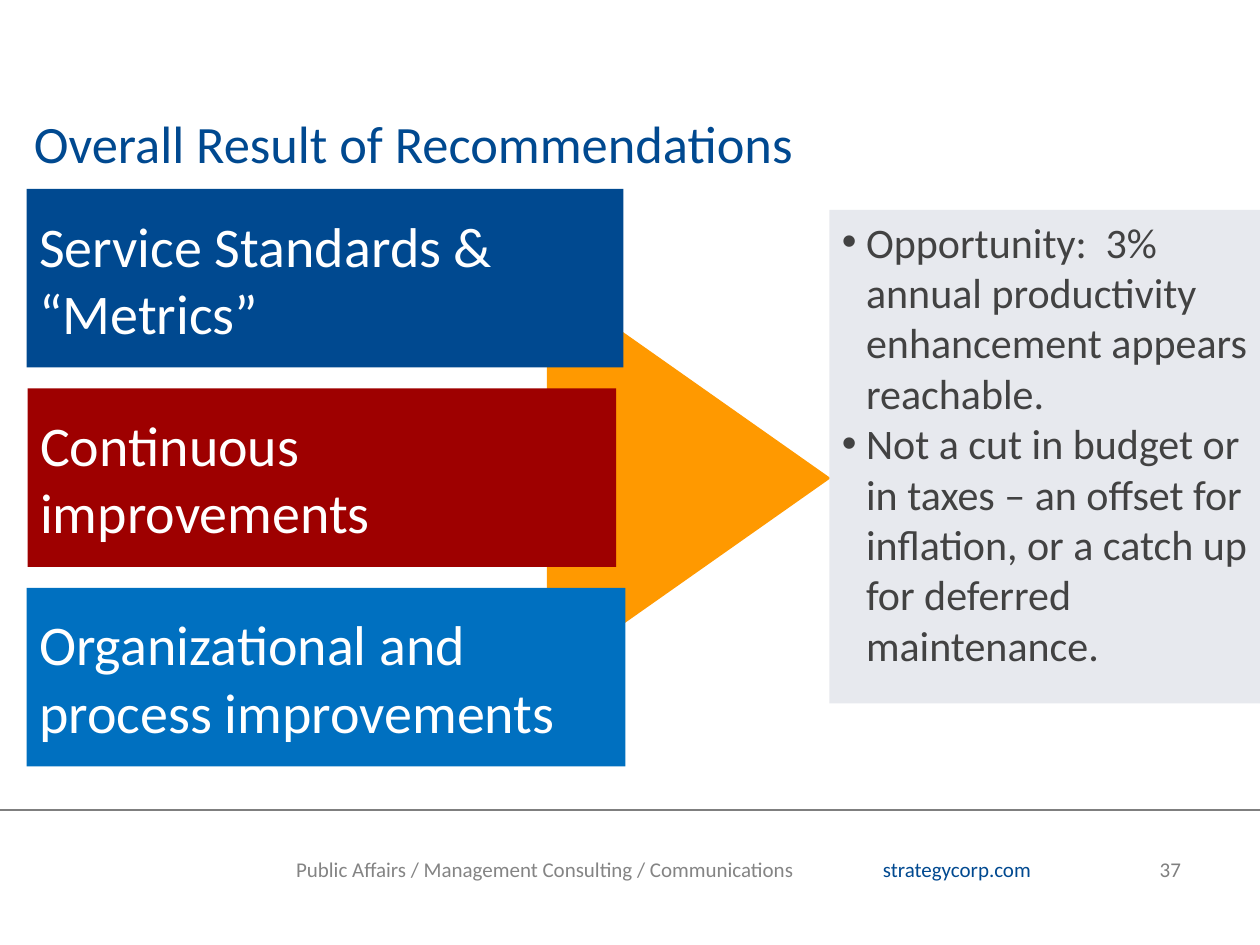
"""Build the slide on the overall result of the recommendations."""
from lxml import etree
from pptx import Presentation
from pptx.dml.color import RGBColor
from pptx.enum.shapes import MSO_CONNECTOR, MSO_SHAPE
from pptx.enum.text import MSO_ANCHOR, PP_ALIGN
from pptx.oxml.ns import qn
from pptx.util import Cm, Pt

RECT, CONE = MSO_SHAPE.RECTANGLE, MSO_SHAPE.ISOSCELES_TRIANGLE
LINE = MSO_CONNECTOR.STRAIGHT
TOP, MID, LEFT = MSO_ANCHOR.TOP, MSO_ANCHOR.MIDDLE, PP_ALIGN.LEFT
NAVY, GREY = "004990", "7F7F7F"


def paint(font, size, tint):
    """Set the face, size and colour of a font."""
    font.name, font.size = "Calibri", Pt(size)
    font.color.rgb = RGBColor.from_string(tint)


def block(kind, x, y, w, h, tint):
    """Add a flat filled shape without a line."""
    shape = slide.shapes.add_shape(kind, Cm(x), Cm(y), Cm(w), Cm(h))
    shape.shadow.inherit = False
    shape.fill.solid()
    shape.fill.fore_color.rgb = RGBColor.from_string(tint)
    shape.line.fill.background()
    return shape


deck = Presentation()
deck.slide_width, deck.slide_height = Cm(25.4), Cm(19.05)
slide = deck.slides.add_slide(deck.slide_layouts[5])

title = slide.shapes.title
title.left, title.top, title.width, title.height = Cm(0.43), Cm(2.11), Cm(22.5), Cm(1.22)
title.text_frame.text = "Overall Result of Recommendations"
title.text_frame.vertical_anchor = TOP
head = title.text_frame.paragraphs[0]
head.alignment = LEFT
paint(head.font, 30, NAVY)

arrow = block(CONE, 9.86, 6.78, 8.05, 5.72, "FF9900")
arrow.rotation = 90

drivers = [
    ("Service Standards & “Metrics”", 0.54, 12.03, NAVY),
    ("Continuous improvements", 0.56, 11.86, "9E0000"),
    ("Organizational and process improvements", 0.54, 12.07, "0070C0"),
]
for row, (text, x, width, tint) in enumerate(drivers):
    frame = block(RECT, x, 3.81 + 4.02 * row, width, 3.6, tint).text_frame
    frame.text = text
    frame.word_wrap, frame.vertical_anchor = True, MID
    para = frame.paragraphs[0]
    para.alignment = LEFT
    paint(para.font, 32, "FFFFFF")

points = [
    "Opportunity:  3% annual productivity enhancement appears reachable.",
    "Not a cut in budget or in taxes – an offset for inflation, or a catch up for deferred maintenance.",
]
frame = block(RECT, 16.72, 4.23, 8.68, 9.95, "E7E9EE").text_frame
frame.word_wrap, frame.vertical_anchor = True, TOP
frame.margin_right = Cm(0.2)
frame.text = "\n".join(points)
for para in frame.paragraphs:
    para.alignment = LEFT
    props = para._p.get_or_add_pPr()
    props.set("marL", str(Cm(0.49)))
    props.set("indent", str(-Cm(0.49)))
    etree.SubElement(props, qn("a:buFont")).set("typeface", "Arial")
    etree.SubElement(props, qn("a:buChar")).set("char", "•")
    paint(para.font, 24, "424242")

rule = slide.shapes.add_connector(LINE, Cm(0), Cm(16.33), Cm(25.4), Cm(16.33))
rule.line.color.rgb = RGBColor.from_string(GREY)
rule.line.width = Pt(1)
etree.SubElement(rule._element.spPr, qn("a:effectLst"))

footers = [
    (5.94, 11.23, [("Public Affairs / Management Consulting / Communications", "848484")]),
    (17.77, 6.38, [("strategycorp.com\t", NAVY), ("37", GREY)]),
]
for x, width, parts in footers:
    frame = slide.shapes.add_textbox(Cm(x), Cm(17.27), Cm(width), Cm(0.51)).text_frame
    frame.word_wrap = True
    frame.margin_left = frame.margin_top = frame.margin_right = frame.margin_bottom = 0
    para = frame.paragraphs[0]
    props = para._p.get_or_add_pPr()
    props.set("marL", str(Cm(0.03)))
    if len(parts) > 1:
        tabs = etree.SubElement(props, qn("a:tabLst"))
        etree.SubElement(tabs, qn("a:tab"), pos=str(Cm(5.58)), algn="l")
    for text, tint in parts:
        run = para.add_run()
        run.text = text
        paint(run.font, 12, tint)

deck.save("out.pptx")
